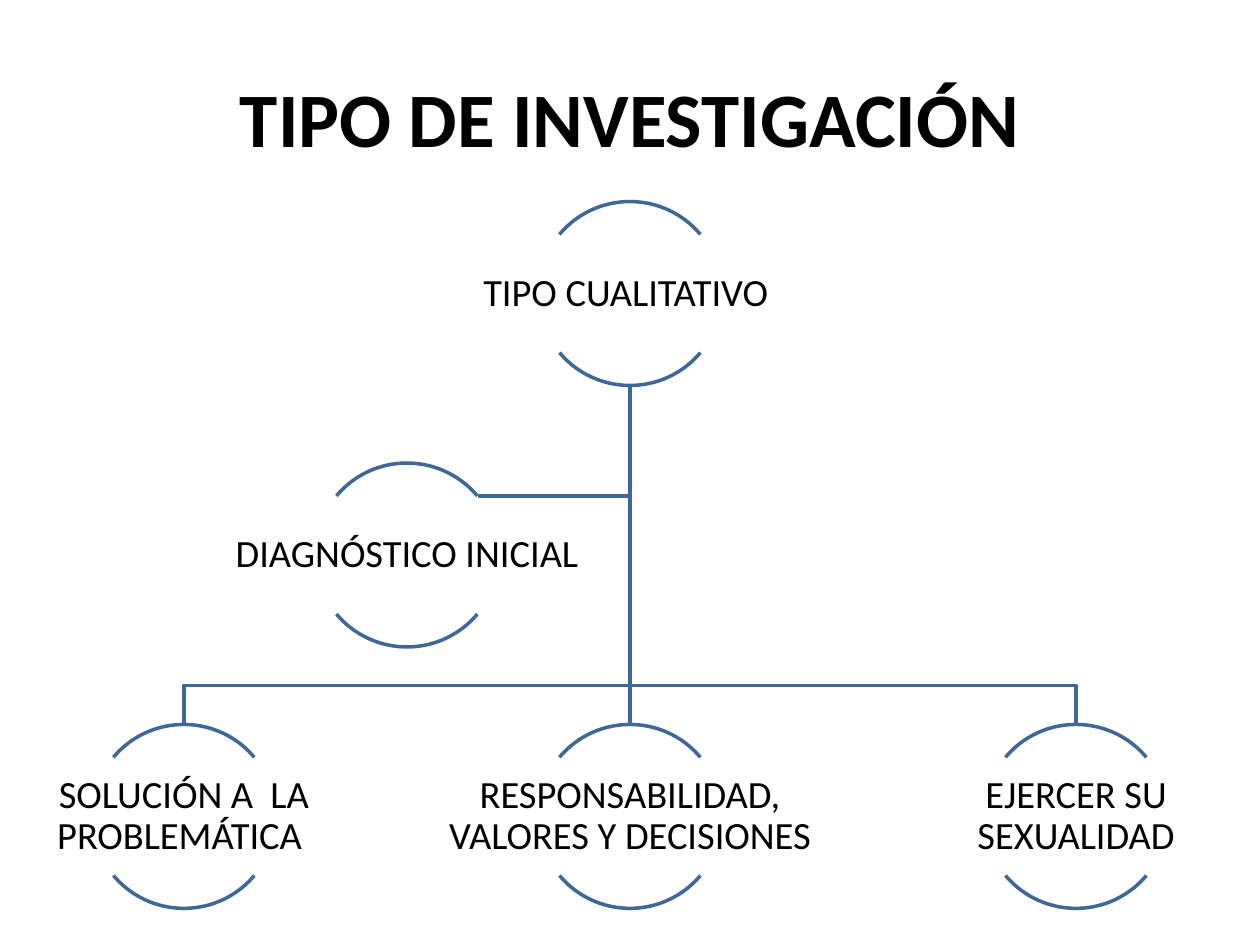
from lxml import etree
from pptx import Presentation, util as u
from pptx.dml.color import RGBColor
from pptx.enum import shapes, text
from pptx.oxml.ns import qn

COLORS = {"line": "3F6797", "text": "000000"}
FONT = "Calibri"
DIAMETER = 1.46
COLUMN, ROW = 1.77, 2.075
LEFT, TOP = 1.46, 1.6
BUS_GAP = 0.31
ARCS = [(132, 192), (24, 84)]
NODES = [
    ("TIPO CUALITATIVO ", 2, 0),
    ("SOLUCIÓN A  LA PROBLEMÁTICA ", 0, 2),
    ("RESPONSABILIDAD, VALORES Y DECISIONES", 2, 2),
    ("EJERCER SU SEXUALIDAD", 4, 2),
    ("DIAGNÓSTICO INICIAL", 1, 1),
]


def node_anchor(column, row):
    """Return the top centre of the node in a grid cell, in inches."""
    return LEFT + column * COLUMN, TOP + row * ROW


def style_line(line):
    """Give an outline the colour and width of the diagram."""
    line.color.rgb = RGBColor.from_string(COLORS["line"])
    line.width = u.Pt(2)


def write(frame, words, size, bold=False):
    """Write one centred run in the middle of a text frame."""
    frame.word_wrap = True
    frame.vertical_anchor = text.MSO_ANCHOR.MIDDLE
    paragraph = frame.paragraphs[0]
    paragraph.alignment = text.PP_ALIGN.CENTER
    run = paragraph.add_run()
    run.text = words
    run.font.name, run.font.size, run.font.bold = FONT, u.Pt(size), bold
    run.font.color.rgb = RGBColor.from_string(COLORS["text"])
    return paragraph


def add_title(slide, words, left, top, width, height):
    """Place and format the title in its box."""
    title = slide.shapes.title
    title.left, title.top = u.Inches(left), u.Inches(top)
    title.width, title.height = u.Inches(width), u.Inches(height)
    write(title.text_frame, words, 44, bold=True)


def add_branch(slide, points):
    """Draw an open bent line through points given in inches."""
    start, *bends = [(u.Inches(x), u.Inches(y)) for x, y in points]
    builder = slide.shapes.build_freeform(*start)
    builder.add_line_segments(bends, close=False)
    branch = builder.convert_to_shape()
    branch.fill.background()
    branch.shadow.inherit = False
    style_line(branch.line)


def add_trunk(slide, start, end):
    """Draw the straight line between two points given in inches."""
    trunk = slide.shapes.add_connector(
        shapes.MSO_CONNECTOR.STRAIGHT, *map(u.Inches, start + end))
    style_line(trunk.line)
    etree.SubElement(trunk._element.spPr, qn("a:effectLst"))


def add_links(slide):
    """Link the root node to the side node and to the bottom row."""
    x, top = node_anchor(2, 0)
    root = (x, top + DIAMETER)
    side_x, side_top = node_anchor(1, 1)
    side_y = side_top + 0.18 * DIAMETER
    add_branch(slide, [root, (x, side_y), (side_x + 0.385 * DIAMETER, side_y)])
    for column in (4, 0):
        leaf = node_anchor(column, 2)
        bus = leaf[1] - BUS_GAP
        add_branch(slide, [root, (x, bus), (leaf[0], bus), leaf])
    add_trunk(slide, root, node_anchor(2, 2))


def add_node(slide, words, center, top, diameter):
    """Draw a label between the two arcs of a circle."""
    for angles in ARCS:
        arc = slide.shapes.add_shape(
            shapes.MSO_SHAPE.ARC, u.Inches(center - diameter / 2),
            u.Inches(top), u.Inches(diameter), u.Inches(diameter))
        arc.adjustments[0], arc.adjustments[1] = angles
        arc.fill.background()
        arc.shadow.inherit = False
        style_line(arc.line)
    label = slide.shapes.add_textbox(
        u.Inches(center - diameter), u.Inches(top + 0.18 * diameter),
        u.Inches(2 * diameter), u.Inches(0.64 * diameter))
    frame = label.text_frame
    frame.margin_left = frame.margin_right = u.Inches(0.02)
    frame.margin_top = frame.margin_bottom = u.Inches(0.02)
    write(frame, words, 22).line_spacing = 0.9


def main():
    """Build the slide and save it."""
    deck = Presentation()
    deck.slide_width, deck.slide_height = u.Inches(10), u.Inches(7.5)
    slide = deck.slides.add_slide(deck.slide_layouts[5])
    add_title(slide, "TIPO DE INVESTIGACIÓN", 0.5, 0.3, 9, 1.25)
    add_links(slide)
    for words, column, row in NODES:
        add_node(slide, words, *node_anchor(column, row), DIAMETER)
    deck.save("out.pptx")


if __name__ == "__main__":
    main()
